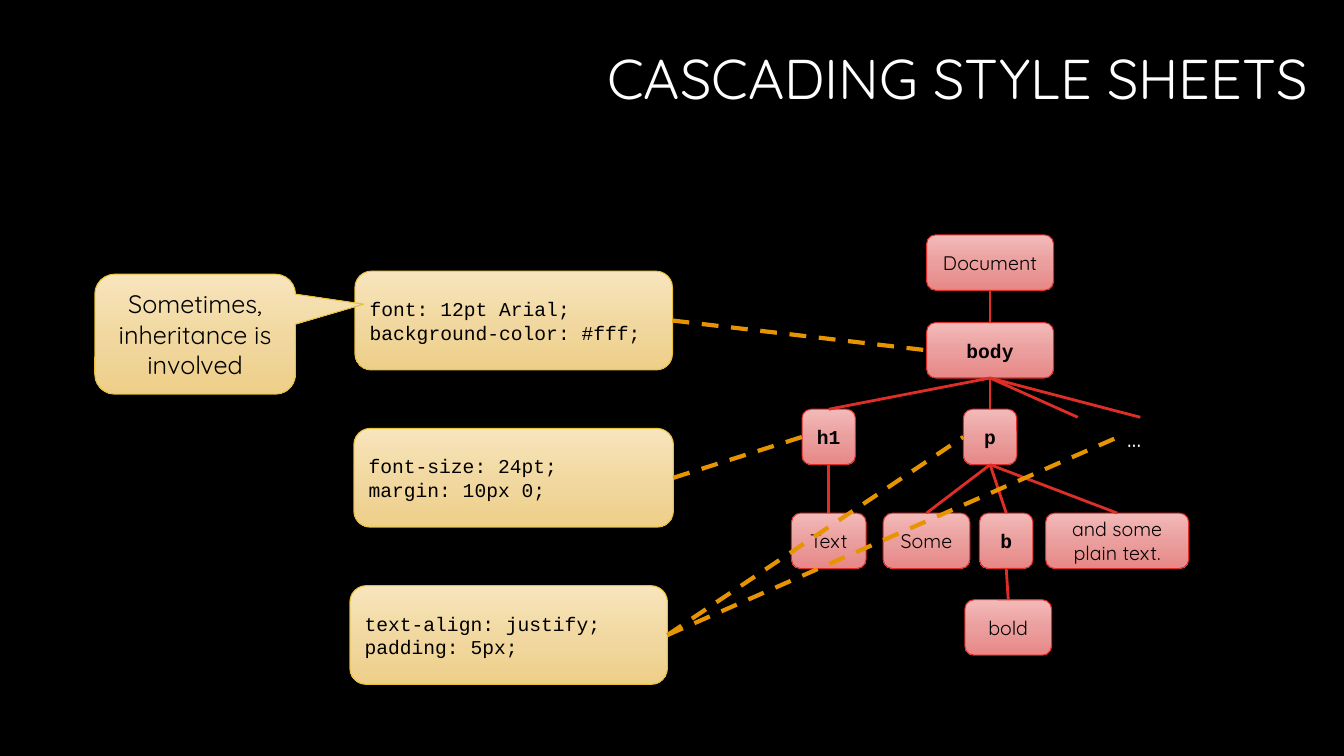
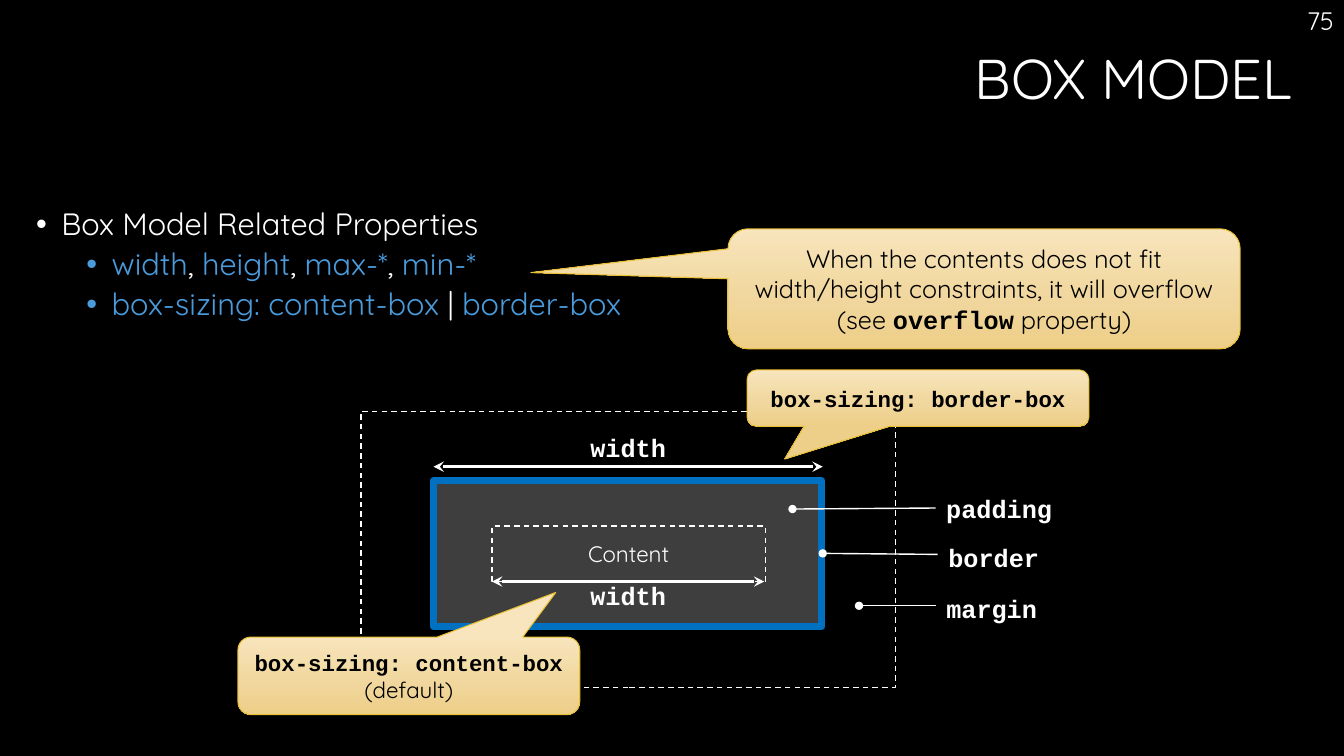
from copy import deepcopy
from dataclasses import dataclass

from lxml.etree import SubElement
from pptx import Presentation
from pptx.dml.color import RGBColor
from pptx.enum.dml import MSO_LINE
from pptx.enum.shapes import MSO_CONNECTOR, MSO_SHAPE
from pptx.enum.text import MSO_ANCHOR as ANCHOR, PP_ALIGN as ALIGN
from pptx.oxml.ns import qn
from pptx.util import Inches, Pt

COLOURS = {
    "back": "000000", "ink": "000000", "light": "FFFFFF", "term": "4A9BDC",
    "tree": "DF2E28", "gold": "E9BF35", "rule": "E69400",
    "padding": "3E3E3E", "border": "0070C0",
}
GRADIENTS = {
    "tree": ("F3BAB9", "EA9E9D", "E78887"),
    "gold": ("F8E5BD", "F1D8A0", "EECF89"),
}
STOPS = (0, 0.52, 1)
SANS, MONO = "Quicksand", "Courier New"
TOP, LEFT, BOTTOM, RIGHT = range(4)


@dataclass
class Span:
    text: str
    size: float = 18
    colour: str = "ink"
    font: str = SANS
    bold: bool = False


def rgb(name):
    return RGBColor.from_string(COLOURS[name])


def code(text, size, colour="ink", bold=True):
    return Span(text, size, colour, MONO, bold)


def write(shape, paras, align=ALIGN.LEFT, anchor=ANCHOR.TOP, wrap=True, inset=None):
    frame = shape.text_frame
    frame.word_wrap = wrap
    frame.vertical_anchor = anchor
    if inset is not None:
        frame.margin_left = frame.margin_right = Inches(inset)
        frame.margin_top = frame.margin_bottom = Inches(inset)
    for index, spans in enumerate(paras):
        para = frame.add_paragraph() if index else frame.paragraphs[0]
        para.alignment = align
        for span in spans:
            run = para.add_run()
            run.text = span.text
            run.font.name = span.font
            run.font.size = Pt(span.size)
            run.font.bold = span.bold
            run.font.color.rgb = rgb(span.colour)
    return frame


def add_text(page, place, paras, align=ALIGN.LEFT, wrap=True):
    box = page.shapes.add_textbox(*map(Inches, place))
    write(box, paras, align, wrap=wrap)
    return box


def add_label(page, place, text):
    return add_text(page, place, [[code(text, 18, "light")]], ALIGN.CENTER, False)


def add_box(page, kind, place, line, width):
    box = page.shapes.add_shape(kind, *map(Inches, place))
    box.shadow.inherit = False
    box.line.color.rgb = rgb(line)
    box.line.width = Pt(width)
    return box


def add_gradient_box(page, kind, place, theme):
    box = add_box(page, kind, place, theme, 0.75)
    box.fill.gradient()
    box.fill.gradient_angle = 270
    stop_list = box.element.spPr.find(".//" + qn("a:gsLst"))
    stop_list.insert(1, deepcopy(stop_list[0]))
    for stop, position, colour in zip(box.fill.gradient_stops, STOPS, GRADIENTS[theme]):
        stop.position = position
        stop.color.rgb = RGBColor.from_string(colour)
    return box


def add_node(page, centre, top, width, span):
    place = (centre - width / 2, top, width, 0.55)
    node = add_gradient_box(page, MSO_SHAPE.ROUNDED_RECTANGLE, place, "tree")
    write(node, [[span]], ALIGN.CENTER, ANCHOR.MIDDLE, inset=0.04)
    return node


def add_callout(page, place, tip, paras):
    box = add_gradient_box(page, MSO_SHAPE.ROUNDED_RECTANGULAR_CALLOUT, place, "gold")
    box.adjustments[0], box.adjustments[1] = tip
    write(box, paras, ALIGN.CENTER, ANCHOR.MIDDLE)


def add_outline(page, place):
    box = add_box(page, MSO_SHAPE.RECTANGLE, place, "light", 1)
    box.fill.background()
    box.line.dash_style = MSO_LINE.DASH
    return box


def add_line(page, start, end, colour, width, dashed=False, head=None, tail=None):
    line = page.shapes.add_connector(
        MSO_CONNECTOR.STRAIGHT, *map(Inches, (*start, *end)))
    line.line.color.rgb = rgb(colour)
    line.line.width = Pt(width)
    if dashed:
        line.line.dash_style = MSO_LINE.DASH
    properties = line.element.spPr
    for tag, kind in (("a:headEnd", head), ("a:tailEnd", tail)):
        if kind:
            SubElement(properties.find(qn("a:ln")), qn(tag), type=kind)
    SubElement(properties, qn("a:effectLst"))
    return line


def add_branch(page, parent, child):
    line = add_line(page, (0, 0), (1, 1), "tree", 2)
    line.begin_connect(parent, BOTTOM)
    line.end_connect(child, TOP)


def add_rule_link(page, rule, target):
    line = add_line(page, (0, 0), (1, 1), "rule", 3, dashed=True)
    line.begin_connect(rule, RIGHT)
    line.end_connect(target, LEFT)


def add_bullets(page, place, items):
    frame = add_text(page, place, [spans for level, spans in items]).text_frame
    for para, (level, spans) in zip(frame.paragraphs, items):
        para.level = level
        para.line_spacing = 0.9
        para.space_before = Pt(5 if level else 10)
        properties = para._p.get_or_add_pPr()
        properties.set("marL", str(Inches(0.25 + 0.5 * level)))
        properties.set("indent", str(Inches(-0.25)))
        SubElement(properties, qn("a:buFont"), typeface="Arial")
        SubElement(properties, qn("a:buChar"), char="•")


def add_page(deck, title):
    page = deck.slides.add_slide(deck.slide_layouts[6])
    page.background.fill.solid()
    page.background.fill.fore_color.rgb = rgb("back")
    box = add_text(page, (0.26, 0.46, 12.81, 1.41), [[Span(title, 40, "light")]], ALIGN.RIGHT)
    box.text_frame.paragraphs[0].line_spacing = 0.9
    return page


def build_cascade(deck):
    page = add_page(deck, "CASCADING STYLE SHEETS")
    node_data = {
        "document": (9.82, 2.33, 1.26, Span("Document", 14)),
        "body": (9.82, 3.2, 1.26, code("body", 14)),
        "h1": (8.22, 4.06, 0.53, code("h1", 14)),
        "p": (9.82, 4.06, 0.53, code("p", 14)),
        "text": (8.22, 5.09, 0.74, Span("Text", 14)),
        "some": (9.19, 5.09, 0.86, Span("Some", 14)),
        "plain": (11.08, 5.09, 1.42, Span("and some plain text.", 14)),
        "b": (9.98, 5.09, 0.53, code("b", 14)),
        "bold": (10, 5.95, 0.86, Span("bold", 14)),
    }
    nodes = {name: add_node(page, *data) for name, data in node_data.items()}
    branches = {
        "document": ["body"], "body": ["p", "h1"], "h1": ["text"],
        "p": ["b", "plain", "some"], "b": ["bold"],
    }
    for parent, children in branches.items():
        for child in children:
            add_branch(page, nodes[parent], nodes[child])
    nodes["more"] = add_text(page, (11.08, 4.14, 0.45, 0.4),
                             [[Span("…", 18, "light")]], wrap=False)
    for end in (10.69, 11.31):
        add_line(page, (9.82, 3.75), (end, 4.14), "tree", 2)

    rules = [
        (3.52, 3.15, ("font: 12pt Arial;", "background-color: #fff;"), ["body"]),
        (3.51, 3.17, ("font-size: 24pt;", "margin: 10px 0;"), ["h1"]),
        (3.47, 3.15, ("text-align: justify;", "padding: 5px;"), ["p", "more"]),
    ]
    for row, (left, width, lines, targets) in enumerate(rules):
        place = (left, 2.69 + 1.56 * row, width, 0.98)
        rule = add_gradient_box(page, MSO_SHAPE.ROUNDED_RECTANGLE, place, "gold")
        write(rule, [[code(text, 14, bold=False)] for text in lines], anchor=ANCHOR.MIDDLE)
        for target in targets:
            add_rule_link(page, rule, nodes[target])
    add_callout(page, (0.94, 2.72, 1.99, 1.19), (0.84, -0.25),
                [[Span("Sometimes, inheritance is involved")]])


def build_box_model(deck):
    page = add_page(deck, "BOX MODEL ")
    terms = [Span(text, 22, "term") for text in ("width", "height", "max-*", "min-*")]
    comma = Span(", ", 22, "light")
    add_bullets(page, (0.26, 2.02, 6.4, 1.41), [
        (0, [Span("Box Model Related Properties", 22, "light")]),
        (1, [span for term in terms for span in (term, comma)][:-1]),
        (1, [Span("box-sizing: content-box", 22, "term"), Span(" | ", 22, "light"),
             Span("border-box", 22, "term")]),
    ])
    add_text(page, (10.45, 0, 2.88, 0.4), [[Span("75", 18, "light")]], ALIGN.RIGHT)
    add_callout(page, (7.22, 2.27, 5.08, 1.19), (-0.885, -0.135), [[
        Span("When the contents does not fit width/height constraints, it will overflow (see "),
        code("overflow", 18), Span(" property)")]])

    add_outline(page, (3.58, 4.08, 5.3, 2.74))
    padding = add_box(page, MSO_SHAPE.RECTANGLE, (4.3, 4.77, 3.85, 1.45), "border", 5)
    padding.fill.solid()
    padding.fill.fore_color.rgb = rgb("padding")
    content = add_outline(page, (4.88, 5.22, 2.71, 0.55))
    write(content, [[Span("Content", 16, "light")]], ALIGN.CENTER, ANCHOR.MIDDLE)

    parts = [
        ("padding", (7.86, 5.05), (9.28, 5.04), 4.84, 1.26),
        ("border", (8.16, 5.49), (9.3, 5.5), 5.33, 1.11),
        ("margin", (8.52, 6.01), (9.28, 6.01), 5.84, 1.11),
    ]
    for name, start, end, top, width in parts:
        add_line(page, start, end, "light", 1, head="oval")
        add_label(page, (end[0], top, width, 0.4), name)
    for left, right, y, top in ((4.88, 7.58, 5.77, 5.71), (4.3, 8.16, 4.63, 4.24)):
        add_line(page, (left, y), (right, y), "light", 2.5, head="stealth", tail="stealth")
        add_label(page, (5.75, top, 0.96, 0.4), "width")

    add_callout(page, (2.36, 6.32, 3.39, 0.77), (0.43, -1.075),
                [[code("box-sizing: content-box", 16)], [Span("(default)", 16)]])
    add_callout(page, (7.41, 3.67, 3.39, 0.56), (-0.39, 1.08),
                [[code("box-sizing: border-box", 16)]])


def main():
    deck = Presentation()
    deck.slide_width, deck.slide_height = Inches(13.33), Inches(7.5)
    build_cascade(deck)
    build_box_model(deck)
    deck.save("out.pptx")


if __name__ == "__main__":
    main()
